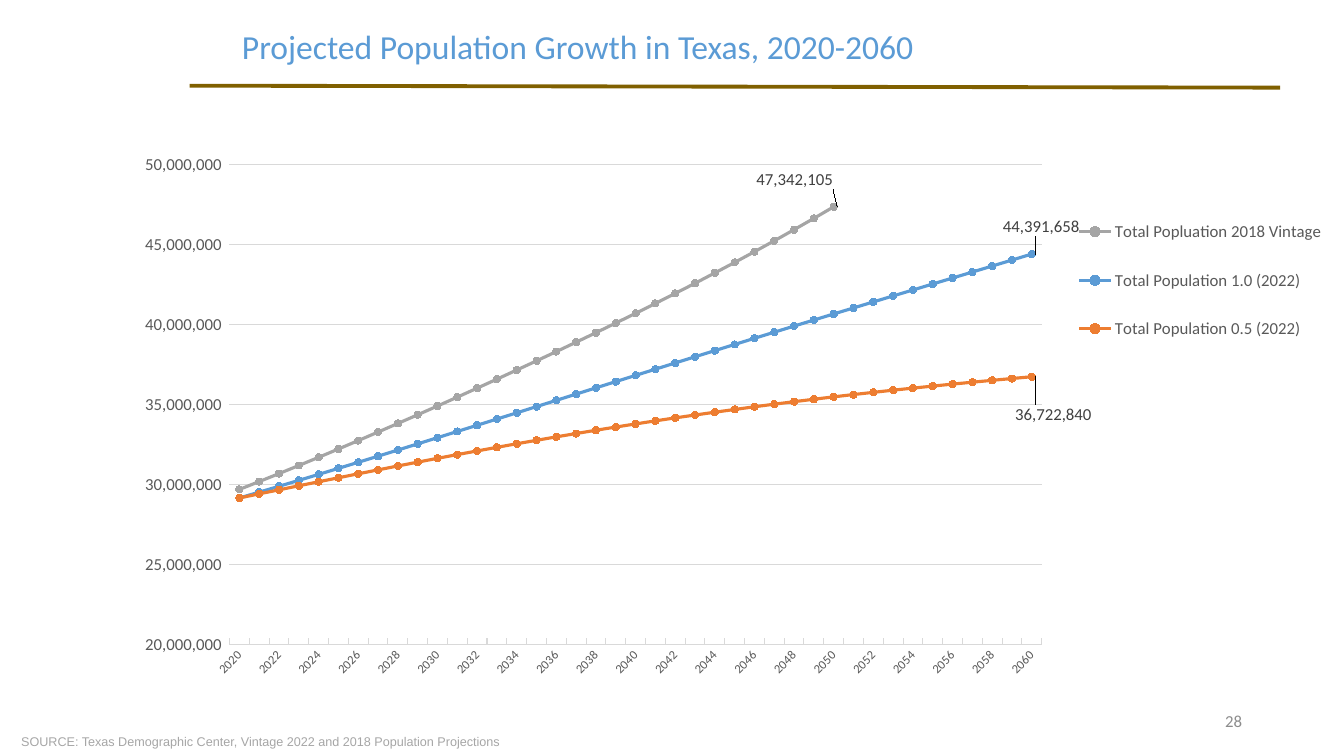
from dataclasses import dataclass

from lxml.etree import SubElement
from pptx import Presentation
from pptx.chart.data import CategoryChartData
from pptx.dml.color import RGBColor
from pptx.enum.chart import (XL_CHART_TYPE, XL_LABEL_POSITION, XL_LEGEND_POSITION,
                             XL_MARKER_STYLE, XL_TICK_MARK)
from pptx.enum.shapes import MSO_CONNECTOR
from pptx.enum.text import MSO_ANCHOR, MSO_AUTO_SIZE, PP_ALIGN
from pptx.oxml import parse_xml
from pptx.oxml.ns import nsdecls, qn
from pptx.util import Pt


@dataclass(frozen=True)
class Theme:
    heading: RGBColor = RGBColor(0x5B, 0x9B, 0xD5)
    rule: RGBColor = RGBColor(0x80, 0x60, 0x00)
    axis_text: RGBColor = RGBColor(0x59, 0x59, 0x59)
    label_text: RGBColor = RGBColor(0x40, 0x40, 0x40)
    grid: RGBColor = RGBColor(0xD9, 0xD9, 0xD9)
    number: RGBColor = RGBColor(0x8C, 0x8C, 0x8C)
    source: RGBColor = RGBColor(0xA6, 0xA6, 0xA6)
    vintage: RGBColor = RGBColor(0xA5, 0xA5, 0xA5)
    full: RGBColor = RGBColor(0x5B, 0x9B, 0xD5)
    half: RGBColor = RGBColor(0xED, 0x7D, 0x31)
    font: str = "Calibri"
    source_font: str = "Arial"
    title_size: int = 24
    text_size: int = 12
    small_size: int = 9


THEME = Theme()

VINTAGE_2018 = [
    29677668, 30168926, 30667390, 31172832, 31685234, 32204920, 32730748, 33263027,
    33801104, 34345157, 34894452, 35449059, 36008470, 36572564, 37142038, 37716495,
    38296865, 38883894, 39477164, 40078056, 40686496, 41303005, 41928733, 42564184,
    43209911, 43866965, 44535432, 45216833, 45911304, 46619758, 47342105]
FULL_MIGRATION = [
    29145505, 29508207, 29874788, 30244881, 30618408, 30995030, 31374415, 31756242,
    32140235, 32525922, 32912882, 33300733, 33689173, 34078174, 34467756, 34857869,
    35248360, 35638739, 36028822, 36418360, 36807213, 37195498, 37583109, 37969850,
    38355509, 38740127, 39123792, 39506360, 39887643, 40267524, 40645784, 41022525,
    41397804, 41771854, 42145223, 42518254, 42891450, 43265100, 43639517, 44015027,
    44391658]
HALF_MIGRATION = [
    29145505, 29399740, 29653355, 29905977, 30157429, 30407353, 30655366, 30901106,
    31144286, 31384529, 31621474, 31854797, 32084302, 32309899, 32531573, 32749324,
    32963029, 33172417, 33377300, 33577483, 33772879, 33963551, 34149494, 34330669,
    34506892, 34678349, 34845200, 35007371, 35164896, 35317667, 35465604, 35608856,
    35747524, 35881837, 36012145, 36138672, 36261747, 36381526, 36498234, 36612002,
    36722840]
YEARS = [str(year) for year in range(2020, 2061)]
PROJECTIONS = [
    ("Total Popluation 2018 Vintage", VINTAGE_2018, THEME.vintage, (-0.07, -0.05)),
    ("Total Population 1.0 (2022)", FULL_MIGRATION, THEME.full, (-0.03, -0.05)),
    ("Total Population 0.5 (2022)", HALF_MIGRATION, THEME.half, (-0.02, 0.07)),
]


def style_font(font, size, color, name=THEME.font):
    font.size, font.name, font.bold = Pt(size), name, False
    font.color.rgb = color


def write(tf, text, size, color, name=THEME.font, align=PP_ALIGN.LEFT):
    tf.word_wrap = True
    tf.auto_size = MSO_AUTO_SIZE.NONE
    p = tf.paragraphs[0]
    p.alignment = align
    r = p.add_run()
    r.text = text
    style_font(r.font, size, color, name)
    return p


def set_layout(parent, index, x, y, size=None, target=None):
    for old in parent.findall(qn("c:layout")):
        parent.remove(old)
    layout = parse_xml(f"<c:layout {nsdecls('c')}><c:manualLayout/></c:layout>")
    values = {"x": x, "y": y}
    if size:
        values = {"xMode": "edge", "yMode": "edge", **values, "w": size[0], "h": size[1]}
    if target:
        values = {"layoutTarget": target, **values}
    for tag, value in values.items():
        SubElement(layout[0], qn(f"c:{tag}")).set("val", str(value))
    parent.insert(index, layout)


def add_header(s, x, y, w, h):
    title = s.shapes.title
    title.left, title.top, title.width, title.height = Pt(x + 30.2), Pt(y), Pt(522), Pt(27.4)
    tf = title.text_frame
    tf.vertical_anchor = MSO_ANCHOR.TOP
    p = write(tf, "Projected Population Growth in Texas, 2020-2060",
              THEME.title_size, THEME.heading)
    p.line_spacing = Pt(18)
    rule = s.shapes.add_connector(MSO_CONNECTOR.STRAIGHT, Pt(x), Pt(y + h - 1.4),
                                  Pt(x + w), Pt(y + h))
    rule.line.color.rgb = THEME.rule
    rule.line.width = Pt(2.75)
    SubElement(rule._element.spPr, qn("a:effectLst"))


def style_axes(chart):
    years, people = chart.category_axis, chart.value_axis
    years.major_tick_mark = XL_TICK_MARK.INSIDE
    years.format.line.color.rgb = THEME.grid
    years.format.line.width = Pt(0.75)
    style_font(years.tick_labels.font, THEME.small_size, THEME.axis_text)
    years._element.find(qn("c:txPr")).find(qn("a:bodyPr")).set("rot", "-2700000")
    skip = parse_xml(f'<c:tickLblSkip {nsdecls("c")} val="2"/>')
    years._element.find(qn("c:noMultiLvlLbl")).addprevious(skip)

    people.minimum_scale, people.maximum_scale = 20000000, 50000000
    people.major_unit = 5000000
    people.major_tick_mark = XL_TICK_MARK.NONE
    people.format.line.fill.background()
    people.major_gridlines.format.line.color.rgb = THEME.grid
    people.major_gridlines.format.line.width = Pt(0.75)
    people.tick_labels.number_format = '_(* #,##0_);_(* \\(#,##0\\);_(* "-"??_);_(@_)'
    people.tick_labels.number_format_is_linked = False
    style_font(people.tick_labels.font, THEME.text_size, THEME.axis_text)


def style_series(series, last, color, offset):
    series.smooth = False
    series.format.line.color.rgb = color
    series.format.line.width = Pt(2.25)
    marker = series.marker
    marker.style, marker.size = XL_MARKER_STYLE.CIRCLE, 5
    marker.format.fill.solid()
    marker.format.fill.fore_color.rgb = color
    marker.format.line.color.rgb = color

    series.data_labels.show_value = False
    label = series.points[last].data_label
    style_font(label.font, THEME.text_size, THEME.label_text)
    label.position = XL_LABEL_POSITION.RIGHT
    labels = series.data_labels._element
    set_layout(labels.find(qn("c:dLbl")), 1, *offset)
    labels.append(parse_xml(
        f'<c:extLst {nsdecls("c")}><c:ext uri="{{CE6537A1-D6FC-4f65-9D91-7224C49458BB}}" '
        'xmlns:c15="http://schemas.microsoft.com/office/drawing/2012/chart">'
        '<c15:showLeaderLines val="1"/></c:ext></c:extLst>'))


def add_projection_chart(s, x, y, w, h):
    data = CategoryChartData(number_format="#,##0")
    data.categories = YEARS
    for name, values, _, _ in PROJECTIONS:
        data.add_series(name, values + [None] * (len(YEARS) - len(values)))
    chart = s.shapes.add_chart(XL_CHART_TYPE.LINE_MARKERS, Pt(x), Pt(y), Pt(w), Pt(h),
                               data).chart
    chart.has_title = False
    style_font(chart.font, 10, THEME.axis_text)
    style_axes(chart)
    plot = chart.plots[0]
    plot.vary_by_categories = False
    for series, (_, values, color, offset) in zip(plot.series, PROJECTIONS):
        style_series(series, len(values) - 1, color, offset)

    chart.has_legend = True
    legend = chart.legend
    legend.position = XL_LEGEND_POSITION.RIGHT
    legend.include_in_layout = False
    style_font(legend.font, THEME.text_size, THEME.axis_text)
    set_layout(legend._element, 1, 0.79, 0.09, (0.21, 0.32))
    plot_area = chart._chartSpace.chart.plotArea
    set_layout(plot_area, 0, 0.093, 0.037, (0.671, 0.882), "inner")


def add_footer(s, x, y, w, h):
    number = s.shapes.add_textbox(Pt(x + w - 216), Pt(y), Pt(216), Pt(28.8))
    number.text_frame.vertical_anchor = MSO_ANCHOR.MIDDLE
    write(number.text_frame, "28", THEME.text_size, THEME.number, align=PP_ALIGN.RIGHT)
    source = s.shapes.add_textbox(Pt(x), Pt(y + h - 18), Pt(785.5), Pt(18))
    p = write(source.text_frame,
              "SOURCE: Texas Demographic Center, Vintage 2022 and 2018 Population Projections",
              THEME.small_size, THEME.source, THEME.source_font)
    p.space_after = Pt(2)


def main():
    prs = Presentation()
    prs.slide_width, prs.slide_height = Pt(960), Pt(540)
    s = prs.slides.add_slide(prs.slide_layouts[5])
    add_header(s, 135.4, 26, 779, 36.6)
    add_projection_chart(s, 83.5, 103, 864.7, 388.8)
    add_footer(s, 8, 500.4, 886.3, 38.2)
    prs.save("out.pptx")


if __name__ == "__main__":
    main()
